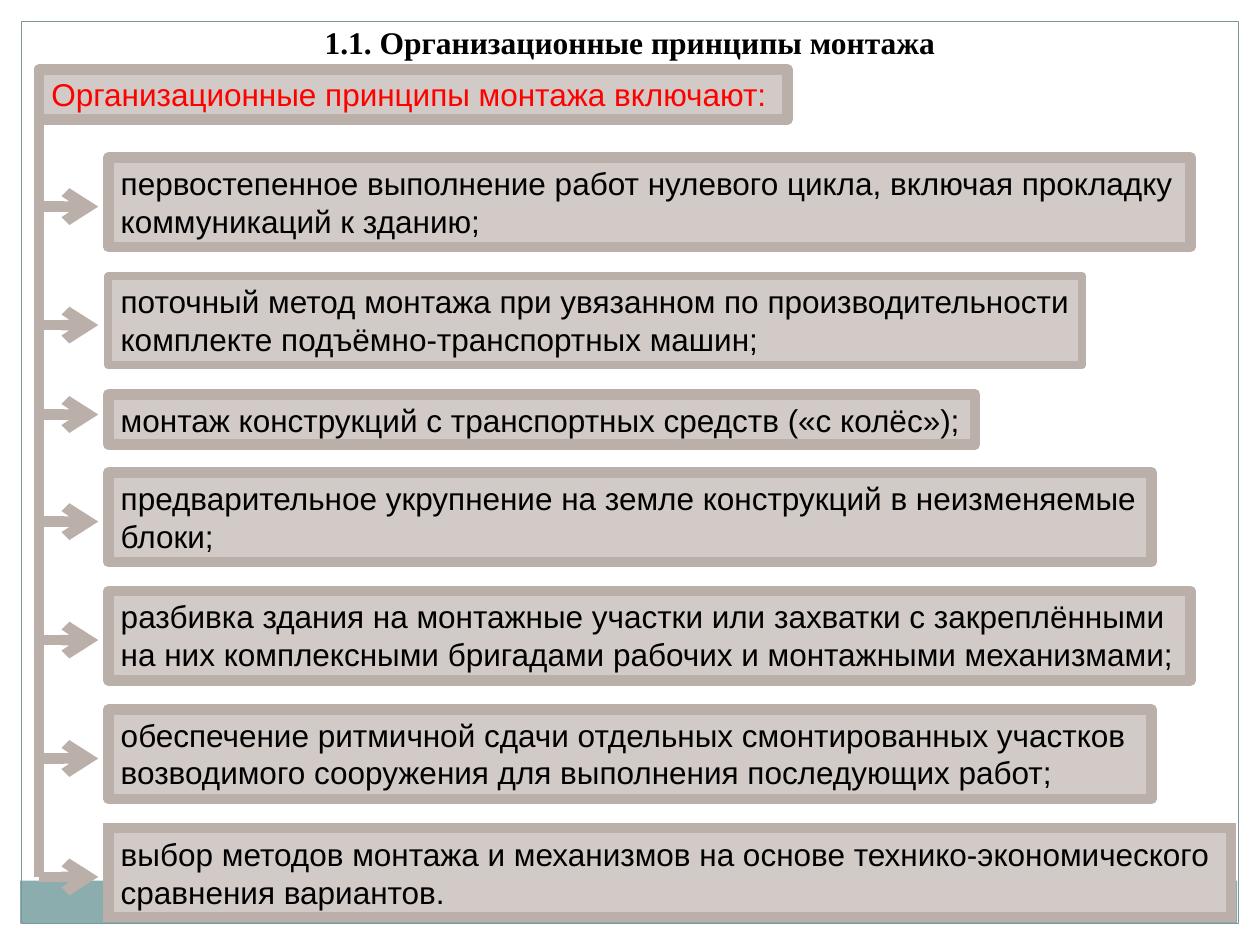
"""Build the slide on the organisational principles of assembly."""
from lxml.etree import SubElement
from pptx import Presentation
from pptx.dml.color import RGBColor
from pptx.enum.shapes import MSO_CONNECTOR, MSO_SHAPE
from pptx.enum.text import MSO_ANCHOR, PP_ALIGN
from pptx.oxml.ns import qn
from pptx.util import Inches, Pt

TITLE = "1.1. Организационные принципы монтажа"
HEADING = "Организационные принципы монтажа включают:"
PRINCIPLES = [
    ("первостепенное выполнение работ нулевого цикла, включая прокладку коммуникаций к зданию;", 8.59, 2, 6),
    ("поточный метод монтажа при увязанном по производительности комплекте подъёмно-транспортных машин;", 7.73, 2, 4.5),
    ("монтаж конструкций с транспортных средств («с колёс»);", 6.88, 1, 6),
    ("предварительное укрупнение на земле конструкций в неизменяемые блоки;", 8.28, 2, 6),
    ("разбивка здания на монтажные участки или захватки с закреплёнными на них комплексными бригадами рабочих и монтажными механизмами;", 8.59, 2, 6),
    ("обеспечение ритмичной сдачи отдельных смонтированных участков возводимого сооружения для выполнения последующих работ;", 8.28, 2, 6),
    ("выбор методов монтажа и механизмов на основе технико-экономического сравнения вариантов.", 8.91, 2, 6),
]

BLACK = RGBColor(0x00, 0x00, 0x00)
RED = RGBColor(0xFF, 0x00, 0x00)
TEAL = RGBColor(0x8C, 0xAD, 0xAE)
FRAME = RGBColor(0x7C, 0x99, 0x9A)
BOX = RGBColor(0xD1, 0xCA, 0xC6)
BORDER = RGBColor(0xBA, 0xB0, 0xA9)

TRUNK_X, TRUNK_TOP, ARROW_END, BOX_LEFT, FIRST_TOP = 0.31, 0.55, 0.78, 0.86, 1.25
HEIGHT = {1: 0.4, 2: 0.71}
STEP = {1: 0.62, 2: 0.94}
ARROW_DROP = {1: 0.16, 2: 0.39}


def add_rect(s, at, fill=None, line=None, width=0.75):
    sp = s.shapes.add_shape(MSO_SHAPE.RECTANGLE, *map(Inches, at))
    sp.shadow.inherit = False
    for part, color in ((sp.fill, fill), (sp.line.fill, line)):
        if color is None:
            part.background()
        else:
            part.solid()
            part.fore_color.rgb = color
    if line is not None:
        sp.line.width = Pt(width)
    return sp


def set_text(sp, text, font, align=PP_ALIGN.LEFT, anchor=MSO_ANCHOR.TOP, wrap=True):
    tf = sp.text_frame
    tf.word_wrap = wrap
    tf.vertical_anchor = anchor
    p = tf.paragraphs[0]
    p.alignment = align
    r = p.add_run()
    r.text = text
    fmt = {"name": "Arial", "size": Pt(18), "bold": False} | font
    r.font.color.rgb = fmt.pop("color", BLACK)
    for key, value in fmt.items():
        setattr(r.font, key, value)


def add_line(s, x1, y1, x2, y2, arrow=False):
    cx = s.shapes.add_connector(MSO_CONNECTOR.STRAIGHT, *map(Inches, (x1, y1, x2, y2)))
    cx.line.color.rgb = BORDER
    cx.line.width = Pt(6)
    if arrow:
        SubElement(cx.line._get_or_add_ln(), qn("a:tailEnd"), type="arrow")
    SubElement(cx._element.spPr, qn("a:effectLst"))


def main():
    prs = Presentation()
    prs.slide_width, prs.slide_height = Inches(10), Inches(7.5)
    s = prs.slides.add_slide(prs.slide_layouts[6])

    add_rect(s, (0.16, 6.99, 9.66, 0.34), fill=TEAL)
    add_rect(s, (0.17, 0.17, 9.66, 7.16), line=FRAME)

    title = s.shapes.add_textbox(*map(Inches, (0, 0.13, 10, 0.4)))
    set_text(title, TITLE, {"name": "Times New Roman", "bold": True}, align=PP_ALIGN.CENTER)
    heading = add_rect(s, (TRUNK_X, TRUNK_TOP, 5.94, HEIGHT[1]), BOX, BORDER, 6)
    set_text(heading, HEADING, {"color": RED}, wrap=False)

    top = FIRST_TOP
    for text, width, lines, border in PRINCIPLES:
        sp = add_rect(s, (BOX_LEFT, top, width, HEIGHT[lines]), BOX, BORDER, border)
        set_text(sp, text, {})
        arrow_y = top + ARROW_DROP[lines]
        add_line(s, TRUNK_X, arrow_y, ARROW_END, arrow_y, arrow=True)
        top += STEP[lines]

    SubElement(sp.line._get_or_add_ln(), qn("a:miter"), lim="800000")
    sp.text_frame.vertical_anchor = MSO_ANCHOR.MIDDLE
    add_line(s, TRUNK_X, TRUNK_TOP, TRUNK_X, arrow_y)

    prs.save("out.pptx")


if __name__ == "__main__":
    main()
